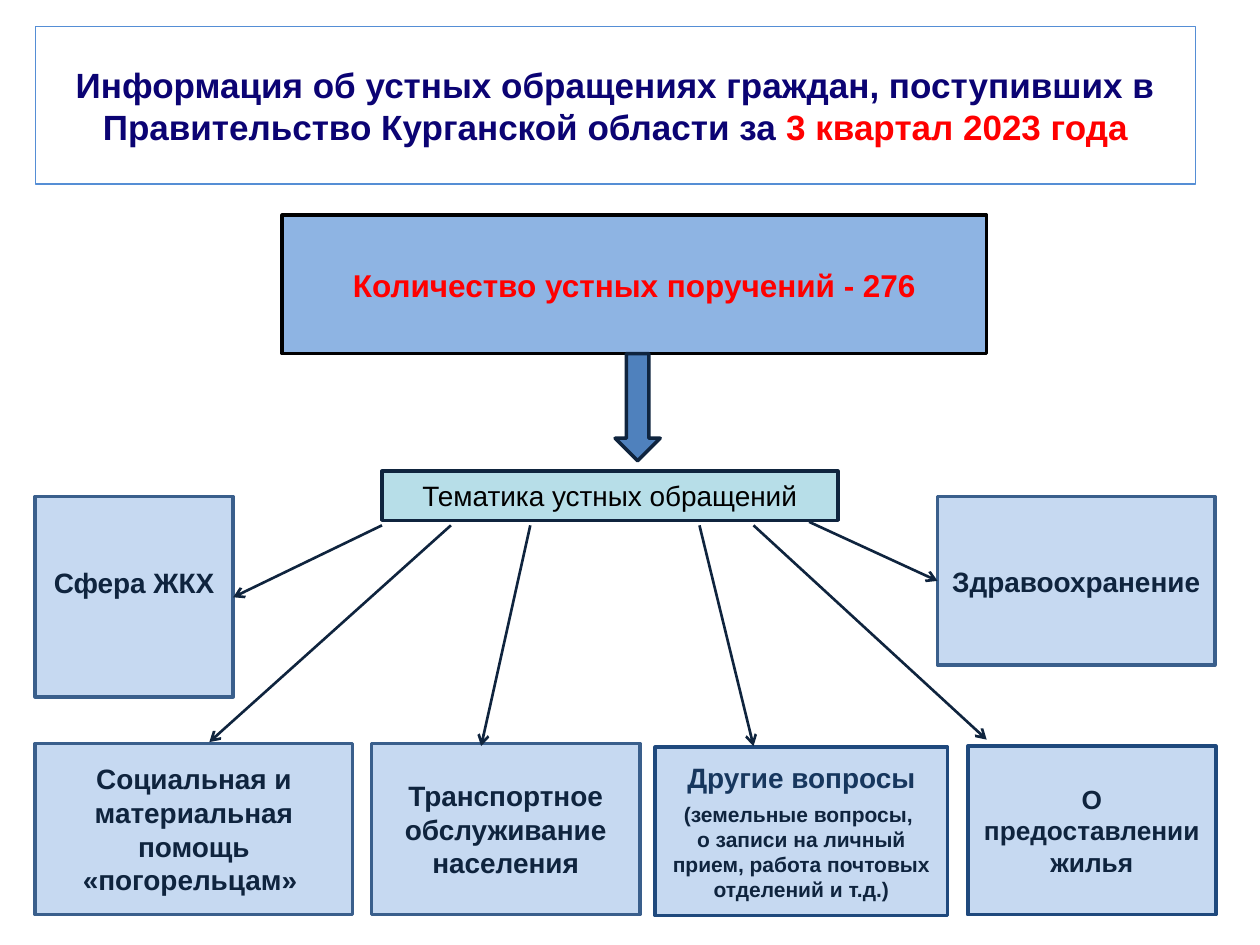
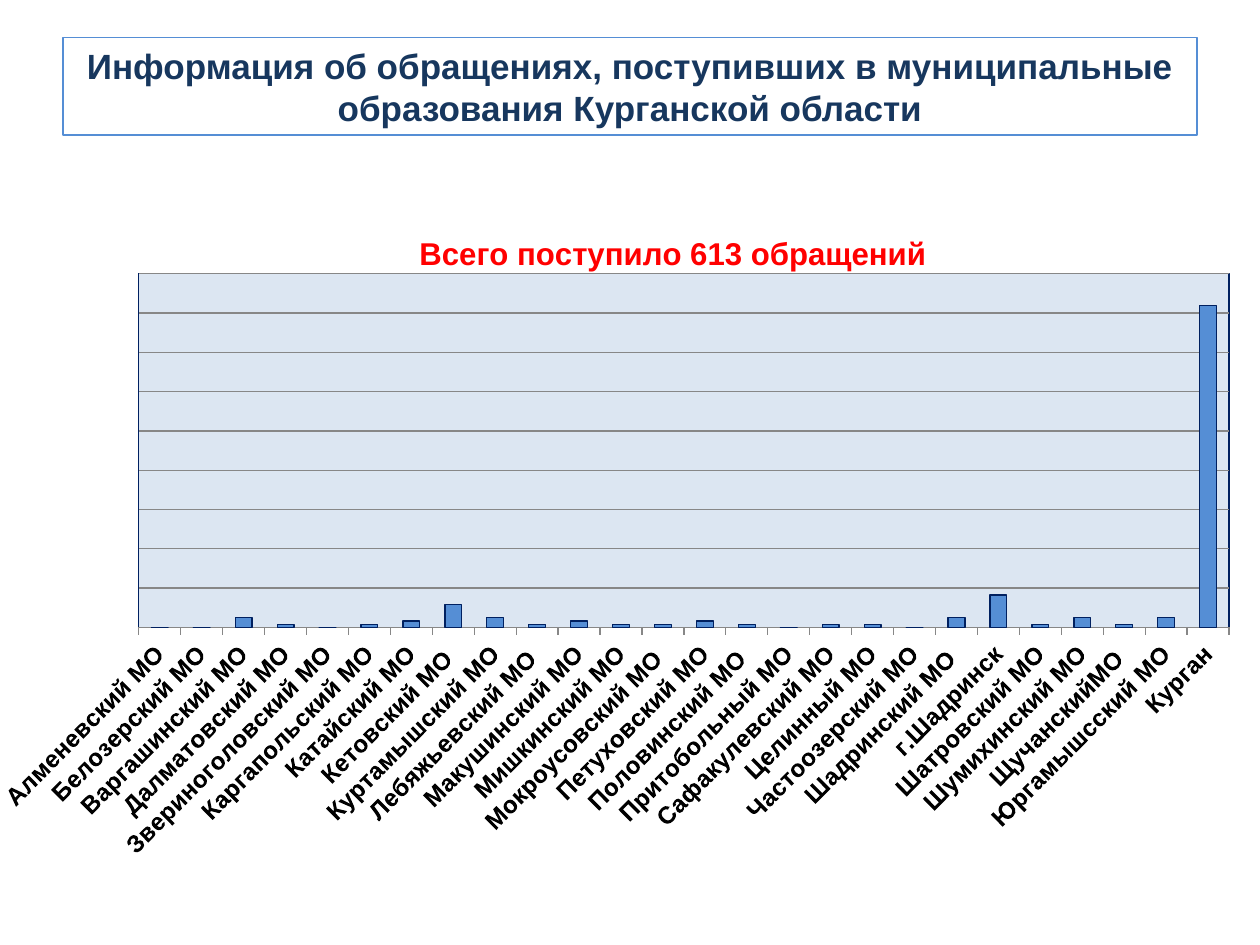
import pptx
import pptx.chart.data
import pptx.dml.color
import pptx.enum.chart
import pptx.enum.shapes
import pptx.enum.text
import pptx.oxml
import pptx.oxml.ns
import pptx.util
from lxml import etree

Cm = pptx.util.Cm
Pt = pptx.util.Pt
SHAPE = pptx.enum.shapes.MSO_SHAPE
NAVY, RED, DARK, PALE = "0F243E", "FF0000", "17375E", "C6D9F1"
STEEL, DEEP, BLUE = "3A5F8C", "1F497D", "558ED5"

TOWNS = [
    ("Алменевский МО", 0), ("Белозерский МО", 0), ("Варгашинский МО", 3),
    ("Далматовский МО", 1), ("Звериноголовский МО", 0),
    ("Каргапольский МО", 1), ("Катайский МО", 2), ("Кетовский МО ", 7),
    ("Куртамышский МО", 3), ("Лебяжьевский МО ", 1), ("Макушинский МО", 2),
    ("Мишкинский МО", 1), ("Мокроусовский МО ", 1), ("Петуховский МО", 2),
    ("Половинский МО ", 1), ("Притобольный МО", 0), ("Сафакулевский МО", 1),
    ("Целинный МО", 1), ("Частоозерский МО", 0), ("Шадринский МО ", 3),
    ("г.Шадринск", 10), ("Шатровский МО", 1), ("Шумихинский МО", 3),
    ("ЩучанскийМО ", 1), ("Юргамышсский МО", 3), ("Курган", 100),
]


def put(item, **vals):
    for key, val in vals.items():
        setattr(item, key, val)


def hue(part, code):
    if hasattr(part, "solid"):
        part.solid()
        part = part.fore_color
    part.rgb = pptx.dml.color.RGBColor.from_string(code)


def stroke(line, code, width):
    hue(line.fill, code)
    line.width = Pt(width)


def style(font, size, code, bold=True):
    put(font, name="Arial", size=Pt(size), bold=bold)
    hue(font.color, code)


def place(item, box):
    put(item, **dict(zip(("left", "top", "width", "height"), map(Cm, box))))


def write(frame, rows, size, bold=True, low=0.13):
    put(frame, word_wrap=True, margin_left=Cm(0.25), margin_right=Cm(0.25),
        margin_top=Cm(0.13), margin_bottom=Cm(low),
        auto_size=pptx.enum.text.MSO_AUTO_SIZE.NONE,
        vertical_anchor=pptx.enum.text.MSO_ANCHOR.MIDDLE)
    for spot, runs in enumerate(rows):
        para = frame.add_paragraph() if spot else frame.paragraphs[0]
        para.alignment = pptx.enum.text.PP_ALIGN.CENTER
        for text, code, *own in runs:
            run = para.add_run()
            run.text = text
            style(run.font, own[0] if own else size, code, bold)


def head(slide, box, runs):
    title = slide.shapes.title
    place(title, box)
    stroke(title.line, BLUE, 0.75)
    write(title.text_frame, [runs], 20)


def block(slide, box, fill, edge, rows=(), size=16, kind=SHAPE.RECTANGLE, **kw):
    shape = slide.shapes.add_shape(kind, *map(Cm, box))
    shape.shadow.inherit = False
    hue(shape.fill, fill)
    stroke(shape.line, edge, 2)
    write(shape.text_frame, rows, size, **kw)
    return shape


def arrow(slide, start, end):
    link = slide.shapes.add_connector(
        pptx.enum.shapes.MSO_CONNECTOR.STRAIGHT, *map(Cm, start + end))
    stroke(link.line, NAVY, 1.5)
    tag = pptx.oxml.ns.qn
    props = link.line._get_or_add_ln()
    etree.SubElement(props, tag("a:tailEnd"), type="arrow")
    etree.SubElement(props.getparent(), tag("a:effectLst"))


def fan(slide, box):
    left, top, width, height = box
    block(slide, box, "B7DEE8", NAVY,
          [[("Тематика устных обращений", "000000")]], bold=False)
    base = top + height + 0.1
    ends = [(0, (4.7, 12.04)), (1.39, (4.22, 14.96)), (2.99, (9.7, 15.04)),
            (6.4, (15.19, 15.04)), (7.49, (19.89, 14.91))]
    for shift, end in ends:
        arrow(slide, (left + shift, base), end)
    arrow(slide, (left + 8.61, top + height + 0.03), (18.9, 11.71))


def count(slide, box):
    left, top, width, height = box
    block(slide, box, "8EB4E3", "000000",
          [[("Количество устных поручений - 276", RED)]], 18)
    block(slide, (left + 6.71, top + height, 0.91, 2.16), "4F81BD", NAVY,
          kind=SHAPE.DOWN_ARROW)


def themes(slide):
    plain = [
        ((0.71, 10.01, 3.99, 4.04), STEEL, "Сфера ЖКХ", 16, 0.73),
        ((18.9, 10.01, 5.59, 3.4), STEEL, "Здравоохранение", 16, 0.13),
        ((0.71, 14.99, 6.4, 3.45), STEEL,
         "Социальная и материальная помощь «погорельцам» ", 16, 0.13),
        ((7.49, 14.99, 5.41, 3.45), STEEL,
         "Транспортное обслуживание населения", 16, 0.13),
        ((19.51, 15.04, 5, 3.4), DEEP, "О предоставлении жилья", 15, 0.13),
    ]
    for box, edge, text, size, low in plain:
        block(slide, box, PALE, edge, [[(text, NAVY)]], size, low=low)
    rows = [[("Другие вопросы", DARK, 16)],
            [("(земельные вопросы, ", NAVY)],
            [("о записи на личный прием, работа почтовых отделений и т.д.)",
              NAVY)]]
    other = block(slide, (13.21, 15.06, 5.89, 3.4), PALE, DEEP, rows, 12)
    other.text_frame.paragraphs[1].space_before = Pt(4)


def layout(node, spot, **vals):
    for old in node.xpath("c:layout"):
        node.remove(old)
    tag = pptx.oxml.ns.qn
    outer = pptx.oxml.parse_xml(
        "<c:layout %s/>" % pptx.oxml.ns.nsdecls("c"))
    inner = etree.SubElement(outer, tag("c:manualLayout"))
    for key, val in vals.items():
        etree.SubElement(inner, tag("c:" + key), val=str(val))
    node.insert(spot, outer)


def bars(slide, box):
    kinds = pptx.enum.chart
    data = pptx.chart.data.CategoryChartData()
    names, vals = zip(*TOWNS)
    data.categories = names
    data.add_series("Series 1", vals)
    chart = slide.shapes.add_chart(
        kinds.XL_CHART_TYPE.COLUMN_CLUSTERED, *map(Cm, box), data).chart
    put(chart, has_legend=False, has_title=True)
    put(chart.font, name="Calibri", size=Pt(18))
    hue(chart.font.color, "000000")
    run = chart.chart_title.text_frame.paragraphs[0].add_run()
    run.text = "Всего поступило 613 обращений "
    style(run.font, 18, RED)

    plot = chart.plots[0]
    put(plot, gap_width=150, vary_by_categories=False)
    form = plot.series[0].format
    hue(form.fill, BLUE)
    stroke(form.line, "002060", 0.75)

    axis = chart.category_axis
    put(axis, major_tick_mark=kinds.XL_TICK_MARK.OUTSIDE,
        has_major_gridlines=False)
    stroke(axis.format.line, "878787", 0.75)
    style(axis.tick_labels.font, 14, "000000")
    scale = chart.value_axis
    put(scale, visible=False, has_major_gridlines=True, minimum_scale=0,
        maximum_scale=109.8, major_unit=12.2)
    stroke(scale.major_gridlines.format.line, "878787", 0.75)

    root = chart.element
    root.xpath(".//c:catAx/c:txPr/a:bodyPr")[0].set("rot", "-2700000")
    layout(root.xpath("c:chart/c:title")[0], 1,
           xMode="edge", yMode="edge", x=0.33, y=0.03)
    area = root.xpath(".//c:plotArea")[0]
    layout(area, 0, layoutTarget="inner", xMode="edge", yMode="edge",
           x=0.104, y=0.091, w=0.896, h=0.461)
    area.append(pptx.oxml.parse_xml(
        '<c:spPr %s><a:solidFill><a:srgbClr val="DCE6F2"/></a:solidFill>'
        '<a:ln w="9525"><a:solidFill><a:srgbClr val="002060"/></a:solidFill>'
        '</a:ln></c:spPr>' % pptx.oxml.ns.nsdecls("c", "a")))


def scheme(deck):
    slide = deck.slides.add_slide(deck.slide_layouts[5])
    head(slide, (0.71, 0.53, 23.39, 3.18), [
        ("Информация об устных обращениях граждан, поступивших в "
         "Правительство Курганской области за ", "0B0373"),
        ("3 квартал 2023 года", RED)])
    count(slide, (5.69, 4.34, 14.2, 2.79))
    themes(slide)
    fan(slide, (7.7, 9.5, 9.19, 0.99))


def towns(deck):
    slide = deck.slides.add_slide(deck.slide_layouts[5])
    head(slide, (1.27, 0.76, 22.86, 1.96), [
        ("Информация об обращениях, поступивших в муниципальные "
         "образования Курганской области", DARK)])
    bars(slide, (0, 4.11, 24.79, 15.47))


def main():
    deck = pptx.Presentation()
    put(deck, slide_width=Cm(25.4), slide_height=Cm(19.05))
    scheme(deck)
    towns(deck)
    deck.save("out.pptx")


if __name__ == "__main__":
    main()
